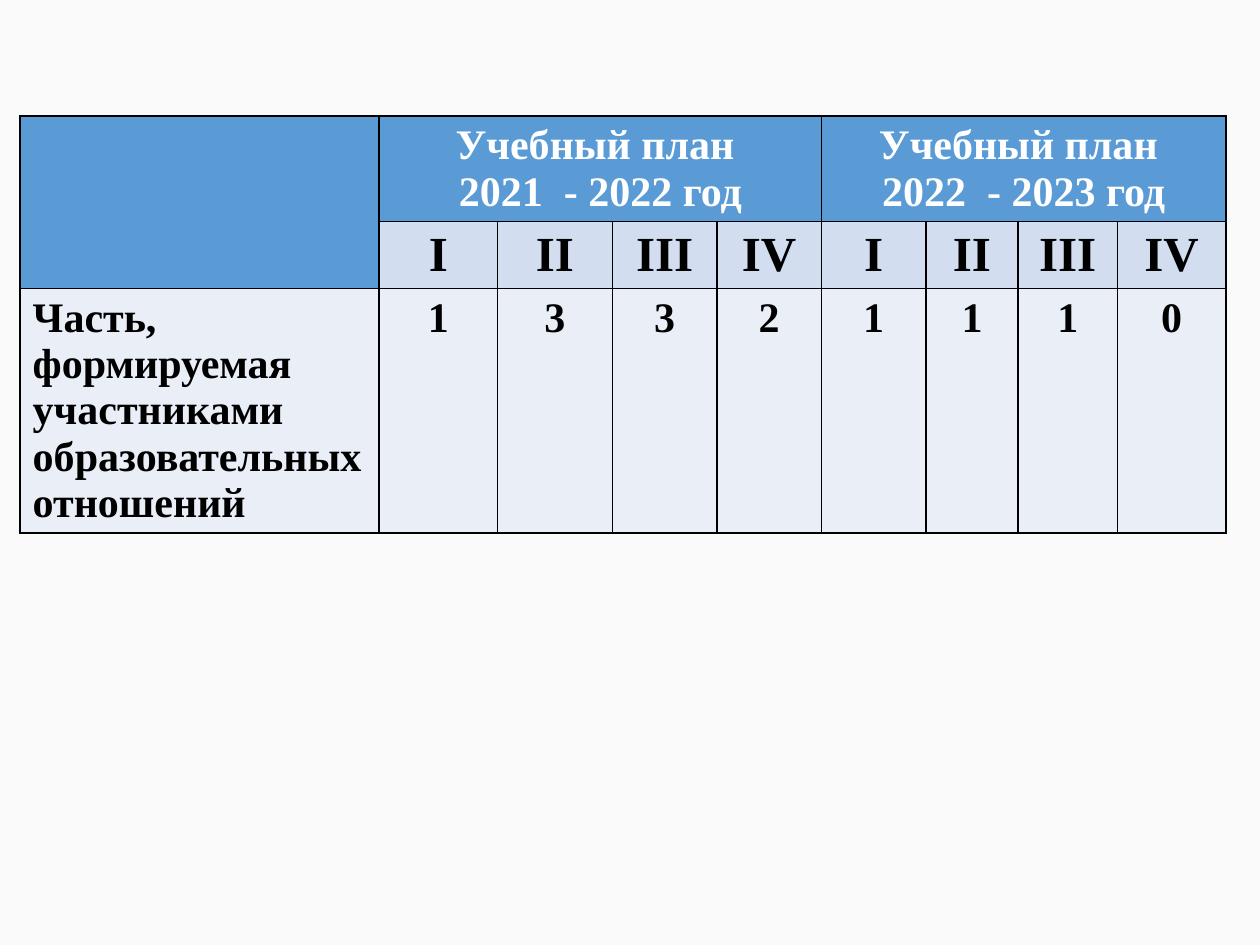
from lxml import etree
from pptx import Presentation
from pptx.dml.color import RGBColor
from pptx.enum.text import PP_ALIGN
from pptx.oxml.ns import qn
from pptx.util import Inches, Pt

BACKGROUND = RGBColor(0xFA, 0xFA, 0xFA)
HEADER_BLUE = RGBColor(0x5B, 0x9B, 0xD5)
GRADE_BLUE = RGBColor(0xD2, 0xDE, 0xEF)
HOURS_BLUE = RGBColor(0xEA, 0xEF, 0xF7)
WHITE = RGBColor(0xFF, 0xFF, 0xFF)
BLACK = RGBColor(0, 0, 0)

COLUMN_WIDTHS = [2.85, 0.94, 0.91, 0.83, 0.83, 0.83, 0.73, 0.79, 0.86]
ROW_HEIGHTS = [0.78, 0.49, 1.81]
GRADES = ["I", "II", "III", "IV"]
PLANS = ["Учебный план \n2021  - 2022 год", "Учебный план \n2022  - 2023 год"]
PART_NAME = "Часть, формируемая участниками образовательных отношений"
ROWS = [
    ["", PLANS[0], "", "", "", PLANS[1], "", "", ""],
    [""] + GRADES * 2,
    [PART_NAME, "1", "3", "3", "2", "1", "1", "1", "0"],
]
# Fill, text colour and text size of each row
ROW_STYLES = [
    (HEADER_BLUE, WHITE, 24),
    (GRADE_BLUE, BLACK, 28),
    (HOURS_BLUE, BLACK, 24),
]


def add_borders(cell, color, width):
    properties = cell._tc.get_or_add_tcPr()
    for position, side in enumerate(["lnL", "lnR", "lnT", "lnB"]):
        line = etree.Element(qn(f"a:{side}"), w=str(width))
        fill = etree.SubElement(line, qn("a:solidFill"))
        etree.SubElement(fill, qn("a:srgbClr"), val=str(color))
        properties.insert(position, line)


deck = Presentation()
deck.slide_width = Inches(10)
deck.slide_height = Inches(7.5)
page = deck.slides.add_slide(deck.slide_layouts[6])
page.background.fill.solid()
page.background.fill.fore_color.rgb = BACKGROUND

frame = page.shapes.add_table(
    len(ROWS), len(COLUMN_WIDTHS), Inches(0.16), Inches(0.92), Inches(9.57), Inches(3.57)
)
table = frame.table
for column, width in zip(table.columns, COLUMN_WIDTHS):
    column.width = Inches(width)
for row, height in zip(table.rows, ROW_HEIGHTS):
    row.height = Inches(height)
frame.height = Inches(3.57)

for row_index, (texts, style) in enumerate(zip(ROWS, ROW_STYLES)):
    row_fill, text_color, text_size = style
    for column_index, text in enumerate(texts):
        cell = table.cell(row_index, column_index)
        cell.fill.solid()
        cell.fill.fore_color.rgb = row_fill
        add_borders(cell, BLACK, Pt(1))
        if not text:
            continue
        cell.text_frame.text = text
        for para in cell.text_frame.paragraphs:
            para.alignment = PP_ALIGN.CENTER if column_index else PP_ALIGN.LEFT
            for span in para.runs:
                span.font.name = "Times New Roman"
                span.font.size = Pt(text_size)
                span.font.bold = True
                span.font.color.rgb = text_color

table.cell(0, 0).merge(table.cell(1, 0))
for first_column in (1, 5):
    table.cell(0, first_column).merge(table.cell(0, first_column + 3))

deck.save("out.pptx")
